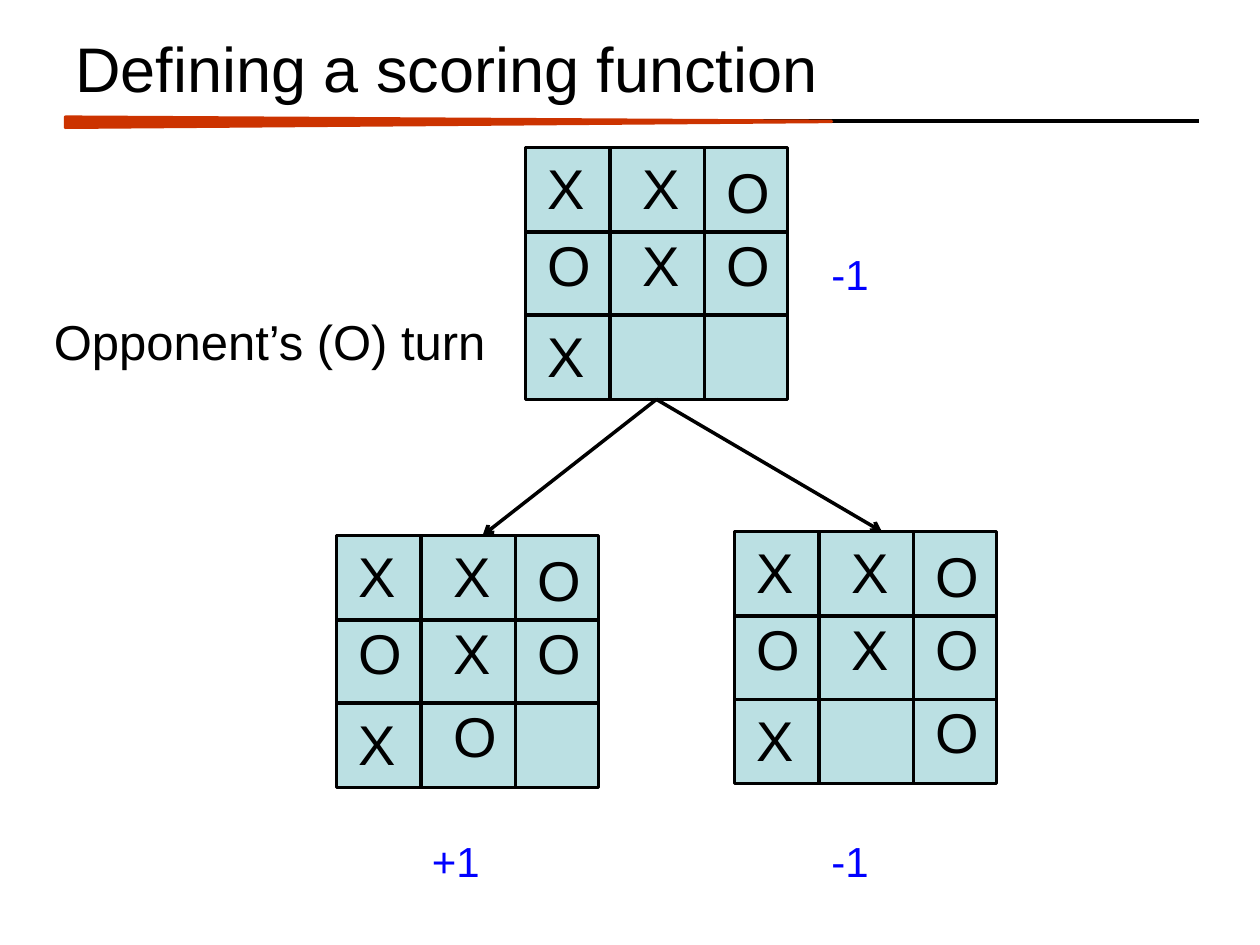
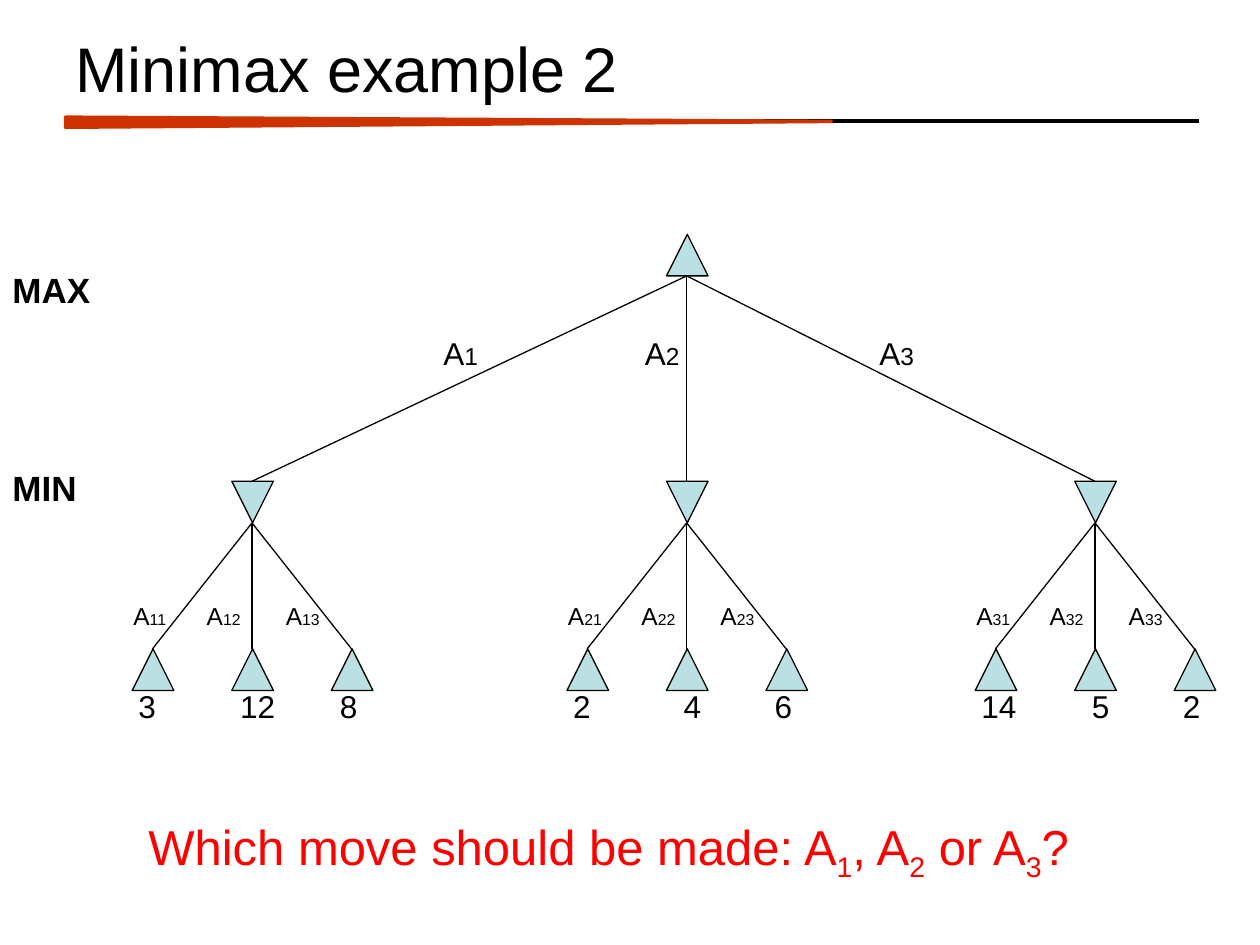
from dataclasses import dataclass

from lxml import etree
from pptx import Presentation
from pptx import util as u
from pptx.dml.color import RGBColor
from pptx.enum import shapes, text
from pptx.oxml.ns import qn
from pptx.shapes.autoshape import Shape
from pptx.shapes.connector import Connector
from pptx.shapes.shapetree import GroupShapes, SlideShapes
from pptx.slide import Slide

EMU_PER_PX = 9144
Canvas = SlideShapes | GroupShapes
Point = tuple[int, int]


@dataclass(frozen=True)
class Theme:
    font: str = "Arial"
    ink: str = "000000"
    accent: str = "CC3300"
    node: str = "BBE0E3"
    score: str = "0000FF"
    question: str = "FF0000"
    title_size: int = 36
    mark_size: int = 32
    body_size: int = 28
    score_size: int = 24
    level_size: int = 20
    branch_size: int = 18
    branch_index_size: int = 14
    leaf_size: int = 14
    leaf_index_size: int = 9
    thick: float = 2
    thin: float = 0.75


THEME = Theme()


@dataclass(frozen=True)
class Box:
    left: int
    top: int
    width: int
    height: int

    def emu(self) -> tuple[int, ...]:
        return tuple(px(v) for v in (self.left, self.top, self.width, self.height))


@dataclass(frozen=True)
class Run:
    words: str
    size: int
    subscript: bool = False


@dataclass(frozen=True)
class Label:
    box: Box
    runs: tuple[Run, ...]
    color: str = THEME.ink
    bold: bool = False
    wrap: bool = False
    centered: bool = False
    middle: bool = False


@dataclass(frozen=True)
class Board:
    left: int
    top: int
    rows: tuple[str, str, str]


@dataclass(frozen=True)
class MinTree:
    center: int
    values: tuple[int, int, int]
    branch_left: int


BOARD_WIDTH, BOARD_HEIGHT = 208, 200
COLUMN_LINES, ROW_LINES = (67, 142), (67, 133)
MARK_LEFTS = (8, 83, 150)
MARK_TOPS = {"X": (0, 61, 133), "O": (3, 61, 127)}

ROOT_BOARD = Board(417, 117, ("XXO", "OXO", "X  "))
LEFT_BOARD = Board(267, 425, ("XXO", "OXO", "XO "))
RIGHT_BOARD = Board(583, 422, ("XXO", "OXO", "X O"))
ARROWS = ((LEFT_BOARD, 383), (RIGHT_BOARD, 700))
SCORES = (("-1", 650, 192, 50), ("+1", 333, 658, 59), ("-1", 650, 658, 50))

NODE_SIZE = 33
MAX_TOP, MIN_TOP, LEAF_TOP = 186, 382, 515
LEAF_GAP = 79
LEAF_LABEL_OFFSETS = (-104, -46, 17)
VALUE_OFFSETS = (-100, 4, 60)
ROOT_CENTER = 545
TREES = (
    MinTree(200, (3, 12, 8), 342),
    MinTree(ROOT_CENTER, (2, 4, 6), 502),
    MinTree(869, (14, 5, 2), 688),
)
LEVELS = (("MAX", 208), ("MIN", 365))


def px(length: int) -> int:
    return length * EMU_PER_PX


def rgb(color: str) -> RGBColor:
    return RGBColor.from_string(color)


def add_label(canvas: Canvas, label: Label) -> None:
    frame = canvas.add_textbox(*label.box.emu()).text_frame
    frame.word_wrap = label.wrap
    frame.auto_size = (
        text.MSO_AUTO_SIZE.NONE if label.middle else text.MSO_AUTO_SIZE.SHAPE_TO_FIT_TEXT
    )
    if label.middle:
        frame.vertical_anchor = text.MSO_ANCHOR.MIDDLE
    paragraph = frame.paragraphs[0]
    paragraph.alignment = text.PP_ALIGN.CENTER if label.centered else text.PP_ALIGN.LEFT
    for part in label.runs:
        run = paragraph.add_run()
        run.text = part.words
        run.font.name = THEME.font
        run.font.size = u.Pt(part.size)
        run.font.bold = label.bold
        run.font.color.rgb = rgb(label.color)
        if part.subscript:
            run._r.get_or_add_rPr().set("baseline", "-25000")


def add_filled(
    canvas: Canvas,
    kind: shapes.MSO_SHAPE,
    box: Box,
    weight: float,
    fill: str = THEME.node,
    outline: str = THEME.ink,
) -> Shape:
    shape = canvas.add_shape(kind, *box.emu())
    shape.shadow.inherit = False
    shape.fill.solid()
    shape.fill.fore_color.rgb = rgb(fill)
    shape.line.color.rgb = rgb(outline)
    shape.line.width = u.Pt(weight)
    return shape


def add_line(
    canvas: Canvas, start: Point, end: Point, weight: float, arrow: bool = False
) -> Connector:
    points = (px(v) for v in (*start, *end))
    connector = canvas.add_connector(shapes.MSO_CONNECTOR.STRAIGHT, *points)
    connector.line.color.rgb = rgb(THEME.ink)
    connector.line.width = u.Pt(weight)
    if arrow:
        etree.SubElement(connector.get_or_add_ln(), qn("a:tailEnd"), type="arrow")
    etree.SubElement(connector._element.spPr, qn("a:effectLst"))
    return connector


def add_titled_slide(presentation: Presentation, title: str) -> Slide:
    slide = presentation.slides.add_slide(presentation.slide_layouts[6])
    add_line(slide.shapes, (52, 96), (952, 96), THEME.thick)
    wedge = add_filled(
        slide.shapes,
        shapes.MSO_SHAPE.ISOSCELES_TRIANGLE,
        Box(352, -207, 8, 608),
        THEME.thick,
        THEME.accent,
        THEME.accent,
    )
    wedge.adjustments[0] = 0.42
    wedge.rotation = 90
    heading = (Run(title, THEME.title_size),)
    add_label(slide.shapes, Label(Box(50, 17, 900, 72), heading, wrap=True, middle=True))
    return slide


def add_board(canvas: Canvas, board: Board) -> Shape:
    left, top = board.left, board.top
    right, bottom = left + BOARD_WIDTH, top + BOARD_HEIGHT
    frame = add_filled(
        canvas,
        shapes.MSO_SHAPE.RECTANGLE,
        Box(left, top, BOARD_WIDTH, BOARD_HEIGHT),
        THEME.thick,
    )
    for offset in COLUMN_LINES:
        add_line(canvas, (left + offset, top), (left + offset, bottom), THEME.thick)
    for offset in ROW_LINES:
        add_line(canvas, (left, top + offset), (right, top + offset), THEME.thick)
    for row, marks in enumerate(board.rows):
        for mark, mark_left in zip(marks, MARK_LEFTS):
            if mark in MARK_TOPS:
                box = Box(left + mark_left, top + MARK_TOPS[mark][row], 67, 64)
                add_label(canvas, Label(box, (Run(mark, THEME.mark_size),), wrap=True))
    return frame


def add_node(canvas: Canvas, center: int, top: int, inverted: bool = False) -> None:
    box = Box(center - NODE_SIZE // 2, top, NODE_SIZE, NODE_SIZE)
    node = add_filled(canvas, shapes.MSO_SHAPE.ISOSCELES_TRIANGLE, box, THEME.thin)
    if inverted:
        node._element.spPr.xfrm.set("flipV", "1")


def add_min_tree(canvas: Canvas, number: int, tree: MinTree) -> None:
    add_node(canvas, tree.center, MIN_TOP, inverted=True)
    for index, value in enumerate(tree.values):
        leaf = tree.center + (index - 1) * LEAF_GAP
        centered = index == 1
        add_node(canvas, leaf, LEAF_TOP)
        add_line(canvas, (tree.center, MIN_TOP + NODE_SIZE), (leaf, LEAF_TOP), THEME.thin)

        width = 53 if value >= 10 else 37
        value_left = tree.center + VALUE_OFFSETS[index] - (width // 2 if centered else 0)
        value_run = Run(str(value), THEME.branch_size)
        add_label(canvas, Label(Box(value_left, 540, width, 50), (value_run,), centered=centered))

        name = (
            Run("A", THEME.leaf_size),
            Run(f"{number}{index + 1}", THEME.leaf_index_size),
        )
        name_box = Box(tree.center + LEAF_LABEL_OFFSETS[index], 472, 47, 33)
        add_label(canvas, Label(name_box, name, centered=centered))


def build_scoring_slide(presentation: Presentation) -> None:
    slide = add_titled_slide(presentation, "Defining a scoring function")
    turn = (Run("Opponent’s (O) turn", THEME.body_size),)
    add_label(slide.shapes, Label(Box(33, 242, 367, 57), turn))
    game = slide.shapes.add_group_shape().shapes
    root = add_board(game, ROOT_BOARD)
    root_exit = (ROOT_BOARD.left + BOARD_WIDTH // 2, ROOT_BOARD.top + BOARD_HEIGHT)
    for board, arrow_end in ARROWS:
        add_board(game, board)
        arrow = add_line(game, root_exit, (arrow_end, board.top), THEME.thick, arrow=True)
        arrow.begin_connect(root, 2)
    for score, left, top, width in SCORES:
        run = Run(score, THEME.score_size)
        add_label(slide.shapes, Label(Box(left, top, width, 50), (run,), THEME.score))


def build_minimax_slide(presentation: Presentation) -> None:
    slide = add_titled_slide(presentation, "Minimax example 2")
    canvas = slide.shapes
    for number, tree in enumerate(TREES, start=1):
        add_min_tree(canvas.add_group_shape().shapes, number, tree)
        root_exit = (ROOT_CENTER, MAX_TOP + NODE_SIZE)
        add_line(canvas, root_exit, (tree.center, MIN_TOP), THEME.thin)
        name = (Run("A", THEME.branch_size), Run(str(number), THEME.branch_index_size))
        add_label(canvas, Label(Box(tree.branch_left, 260, 48, 40), name))
    add_node(canvas, ROOT_CENTER, MAX_TOP)

    pieces = ("Which move should be made: A", "1", ", A", "2", " or A", "3", "?")
    question = tuple(
        Run(piece, THEME.body_size, subscript=piece.isdigit()) for piece in pieces
    )
    add_label(canvas, Label(Box(108, 643, 767, 57), question, THEME.question, wrap=True))
    for level, top in LEVELS:
        run = Run(level, THEME.level_size)
        add_label(canvas, Label(Box(0, top, 125, 44), (run,), bold=True, wrap=True))


def main() -> None:
    presentation = Presentation()
    presentation.slide_width, presentation.slide_height = px(1000), px(750)
    build_scoring_slide(presentation)
    build_minimax_slide(presentation)
    presentation.save("out.pptx")


if __name__ == "__main__":
    main()
